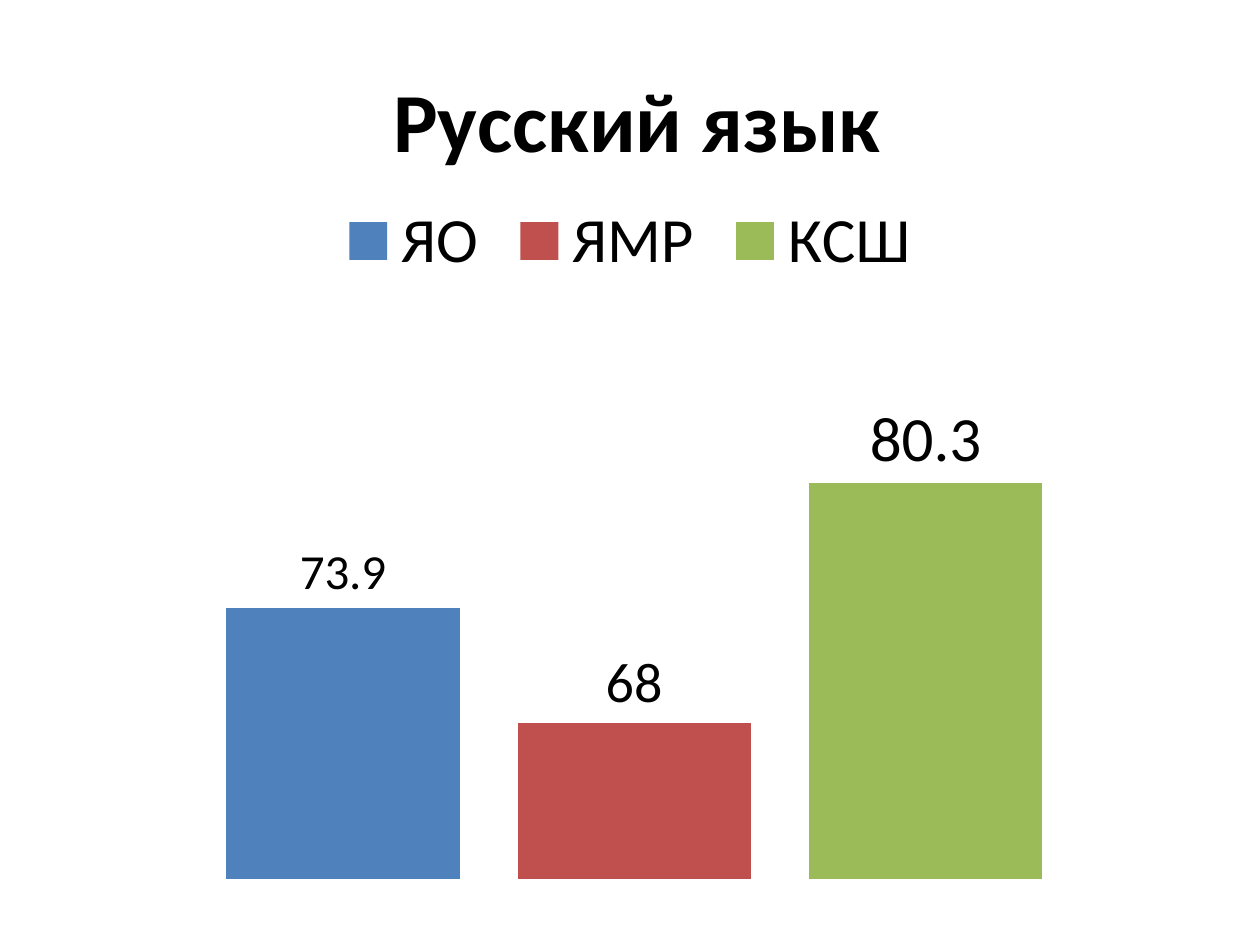
from dataclasses import dataclass

from pptx import Presentation
from pptx.chart.data import CategoryChartData
from pptx.dml.color import RGBColor
from pptx.enum import chart as chart_enum
from pptx.oxml import parse_xml
from pptx.oxml import ns
from pptx.util import Inches, Pt


@dataclass(frozen=True)
class Theme:
    font: str = "Calibri"
    ink: str = "000000"
    base_size: int = 10
    title_size: int = 48
    legend_size: int = 36


@dataclass(frozen=True)
class Score:
    name: str
    value: float
    color: str
    label_size: int


THEME = Theme()
SCORES = [
    Score("ЯО", 73.9, "4F81BD", 28),
    Score("ЯМР", 68, "C0504D", 32),
    Score("КСШ", 80.3, "9BBB59", 36),
]


def style_font(font, size, bold=False):
    font.name = THEME.font
    font.size = Pt(size)
    font.bold = bold
    font.color.rgb = RGBColor.from_string(THEME.ink)


def set_layout(element, index, **settings):
    for old in element.findall(ns.qn("c:layout")):
        element.remove(old)
    children = "".join(f'<c:{key} val="{value}"/>' for key, value in settings.items())
    element.insert(index, parse_xml(
        f'<c:layout {ns.nsdecls("c")}><c:manualLayout>{children}'
        "</c:manualLayout></c:layout>"
    ))


def add_title(chart, wording):
    chart.has_title = True
    title = chart.chart_title
    title.include_in_layout = False
    title.text_frame.text = wording
    style_font(title.text_frame.paragraphs[0].runs[0].font, THEME.title_size, bold=True)
    set_layout(title._element, 1, xMode="edge", yMode="edge", x=0.3, y=0.05)


def add_legend(chart):
    chart.has_legend = True
    legend = chart.legend
    legend.position = chart_enum.XL_LEGEND_POSITION.TOP
    legend.include_in_layout = False
    style_font(legend.font, THEME.legend_size)
    set_layout(legend._element, 1, xMode="edge", yMode="edge",
               x=0.26, y=0.2, w=0.48, h=0.11)


def style_columns(chart):
    plot = chart.plots[0]
    plot.vary_by_categories = False
    plot.gap_width = 150
    plot.overlap = -25
    set_layout(plot._element.getparent(), 0, layoutTarget="inner",
               xMode="edge", yMode="edge", x=0.041, y=0.415, w=0.925, h=0.515)
    for series, score in zip(plot.series, SCORES):
        series.format.fill.solid()
        series.format.fill.fore_color.rgb = RGBColor.from_string(score.color)
        labels = series.data_labels
        labels.show_value = True
        labels.position = chart_enum.XL_LABEL_POSITION.OUTSIDE_END
        style_font(labels.font, score.label_size)


def hide_axes(chart):
    for axis in (chart.category_axis, chart.value_axis):
        axis.has_major_gridlines = False
        axis.visible = False
    chart.value_axis.minimum_scale = 60
    chart.value_axis.maximum_scale = 85


def add_score_chart(page, left, top, width, height):
    chart_data = CategoryChartData()
    chart_data.categories = ["1"]
    for score in SCORES:
        chart_data.add_series(score.name, [score.value])
    chart = page.shapes.add_chart(
        chart_enum.XL_CHART_TYPE.COLUMN_CLUSTERED, left, top, width, height, chart_data
    ).chart
    style_font(chart.font, THEME.base_size)
    add_title(chart, "Русский язык")
    add_legend(chart)
    style_columns(chart)
    hide_axes(chart)


def main():
    deck = Presentation()
    deck.slide_width, deck.slide_height = Inches(10), Inches(7.5)
    page = deck.slides.add_slide(deck.slide_layouts.get_by_name("Blank"))
    add_score_chart(page, Inches(0), Inches(0), deck.slide_width, deck.slide_height)
    deck.save("out.pptx")


if __name__ == "__main__":
    main()
